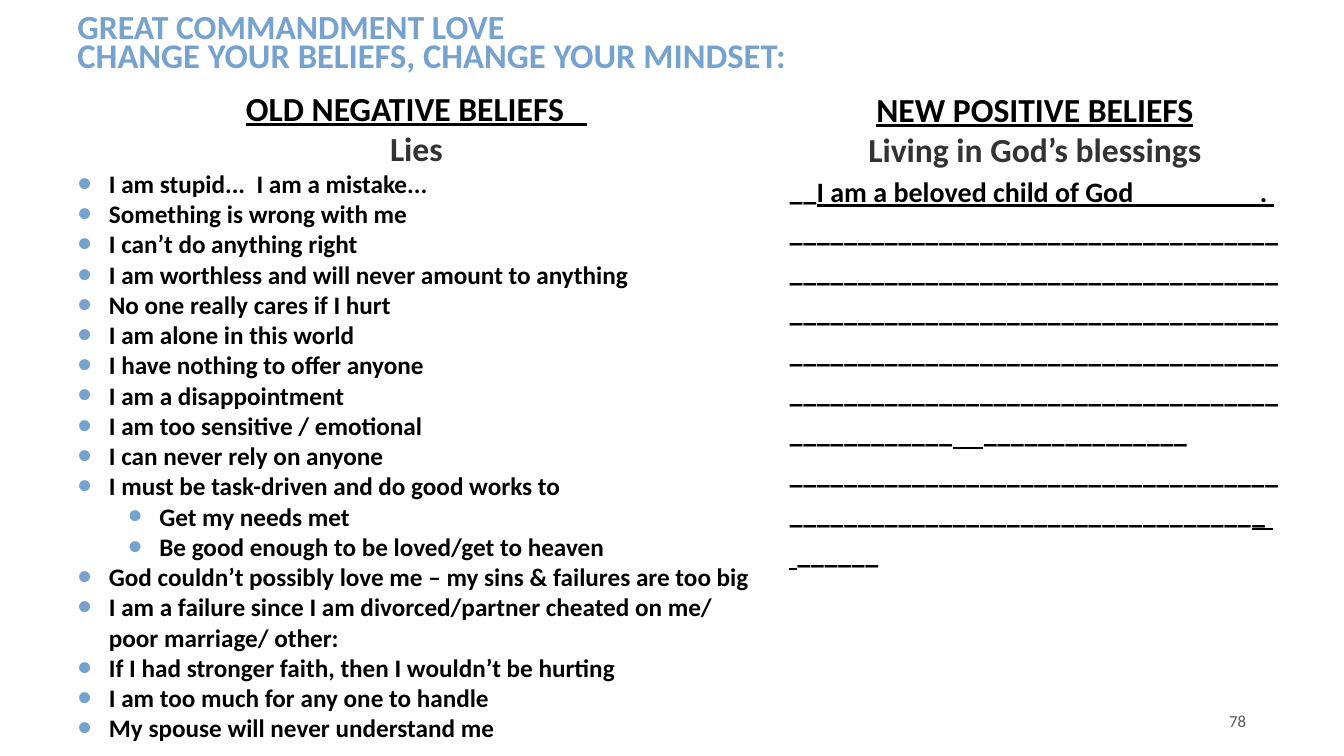
"""Build the slide that sets old negative beliefs beside new positive ones."""
from lxml import etree
from pptx import Presentation
from pptx.dml.color import RGBColor
from pptx.enum.shapes import MSO_SHAPE
from pptx.enum.text import MSO_ANCHOR, MSO_AUTO_SIZE, PP_ALIGN
from pptx.oxml.ns import qn
from pptx.util import Inches, Pt

RECT = MSO_SHAPE.RECTANGLE
TOP, MIDDLE = MSO_ANCHOR.TOP, MSO_ANCHOR.MIDDLE
LEFT, CENTER, RIGHT = PP_ALIGN.LEFT, PP_ALIGN.CENTER, PP_ALIGN.RIGHT
NO_FIT = MSO_AUTO_SIZE.NONE
SANS, RULE = "Calibri", "Roboto Condensed"
BLACK, GREY, BLUE, WHITE, PAGE = "000000", "333333", "75A2CE", "FFFFFF", "595959"

TITLE = [("GREAT COMMANDMENT LOVE", 24.1),
         ("CHANGE YOUR BELIEFS, CHANGE YOUR MINDSET:", 24.7)]
OLD_HEAD = ("OLD NEGATIVE BELIEFS   ", "Lies")
NEW_HEAD = ("NEW POSITIVE BELIEFS", "Living in God’s blessings")
LIES = [
    (0, "I am stupid...\u00a0 I am a mistake..."),
    (0, "Something is wrong with me"),
    (0, "I can’t do anything right"),
    (0, "I am worthless and will never amount to anything"),
    (0, "No one really cares if I hurt"),
    (0, "I am alone in this world"),
    (0, "I have nothing to offer anyone"),
    (0, "I am a disappointment"),
    (0, "I am too sensitive / emotional"),
    (0, "I can never rely on anyone"),
    (0, "I must be task-driven and do good works to"),
    (1, "Get my needs met"),
    (1, "Be good enough to be loved/get to heaven"),
    (0, "God couldn’t possibly love me – my sins & failures are too big"),
    (0, "I am a failure since I am divorced/partner cheated on me/ poor marriage/ other:"),
    (0, "If I had stronger faith, then I wouldn’t be hurting"),
    (0, "I am too much for any one to handle"),
    (0, "My spouse will never understand me"),
]
BLESSING = "I am a beloved child of God                    .  "
BLANKS = [[("_" * 192, False), ("    ", True), ("_" * 15, False)],
          [("_" * 70, False), ("_   ", True), ("_" * 6, False)]]


def rgb(code):
    return RGBColor.from_string(code)


def frame(sp, inset=0.05, anchor=TOP, wrap=True):
    tf = sp.text_frame
    tf.word_wrap, tf.auto_size, tf.vertical_anchor = wrap, NO_FIT, anchor
    tf.margin_left = tf.margin_right = Inches(inset)
    tf.margin_top = tf.margin_bottom = Inches(0.05)
    return tf


def panel(s, x, y, w, h):
    sp = s.shapes.add_shape(RECT, Inches(x), Inches(y), Inches(w), Inches(h))
    sp.shadow.inherit = False
    sp.fill.solid()
    sp.fill.fore_color.rgb = rgb(WHITE)
    sp.line.fill.background()
    return frame(sp)


def add_para(tf, align=LEFT, spacing=None):
    p = tf.paragraphs[0]
    if p.runs:
        p = tf.add_paragraph()
    p.alignment = align
    if spacing:
        p.line_spacing = spacing
    return p


def add_run(p, text, size=24, font=SANS, color=BLACK, bold=True, underline=False):
    r = p.add_run()
    r.text = text
    f = r.font
    f.size, f.name, f.bold, f.underline = Pt(size), font, bold, underline
    f.color.rgb = rgb(color)


def add_bullet(p, level):
    p.level = level
    pPr = p._p.get_or_add_pPr()
    pPr.set("marL", str(Inches(0.31 + 0.5 * level)))
    pPr.set("indent", str(Inches(-0.31)))
    clr = etree.SubElement(pPr, qn("a:buClr"))
    etree.SubElement(clr, qn("a:srgbClr"), val=BLUE)
    etree.SubElement(pPr, qn("a:buSzPct"), val="160000")
    etree.SubElement(pPr, qn("a:buFont"), typeface="Arial")
    etree.SubElement(pPr, qn("a:buChar"), char="•")


def add_heading(tf, head):
    add_run(add_para(tf, CENTER), head[0], underline=True)
    add_run(add_para(tf, CENTER), head[1], color=GREY)


def main():
    prs = Presentation()
    prs.slide_width, prs.slide_height = Inches(13.33), Inches(7.5)
    s = prs.slides.add_slide(prs.slide_layouts[6])

    old = panel(s, 0.72, 0.82, 6.82, 6.97)
    add_heading(old, OLD_HEAD)
    for level, lie in LIES:
        p = add_para(old)
        add_bullet(p, level)
        add_run(p, lie, size=18)

    new = panel(s, 7.78, 0.83, 4.97, 5.76)
    add_heading(new, NEW_HEAD)
    for i, blanks in enumerate(BLANKS):
        p = add_para(new)
        if i == 0:
            add_run(p, "__", font=RULE, bold=False)
            add_run(p, BLESSING, size=20, underline=True)
        for text, underline in blanks:
            add_run(p, text, font=RULE, bold=False, underline=underline)

    box = s.shapes.add_textbox(Inches(0.67), Inches(0.12), Inches(11.37), Inches(0.7))
    tf = frame(box, inset=0.1)
    for text, size in TITLE:
        add_run(add_para(tf, spacing=0.7), text, size=size, color=BLUE)

    box = s.shapes.add_textbox(Inches(12.14), Inches(7), Inches(0.27), Inches(0.3))
    tf = frame(box, anchor=MIDDLE, wrap=False)
    add_run(add_para(tf, RIGHT), "78", size=12, color=PAGE, bold=False)

    prs.save("out.pptx")


if __name__ == "__main__":
    main()
